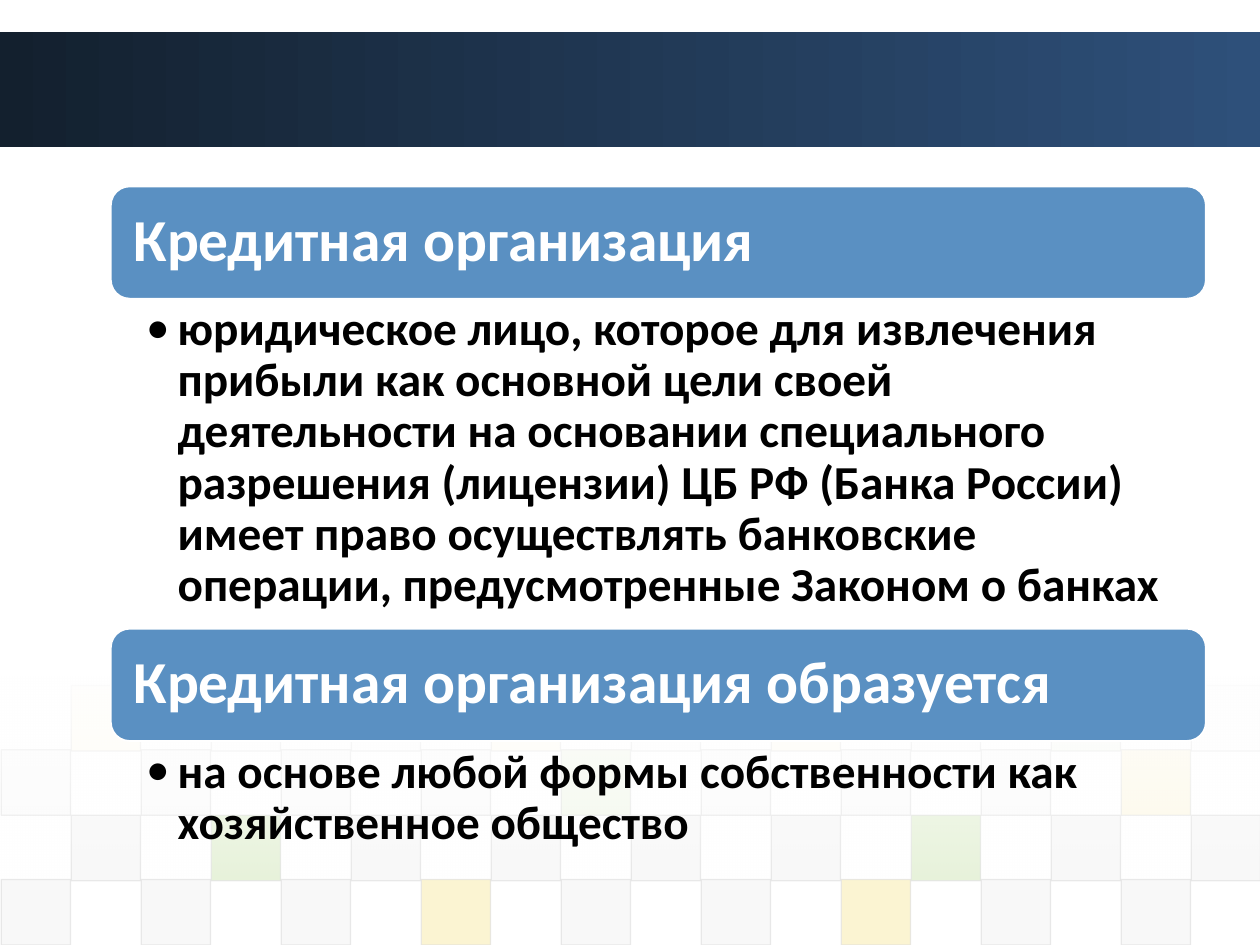
import lxml.etree
import pptx
import pptx.dml.color
import pptx.enum.shapes
import pptx.enum.text
import pptx.oxml.ns
import pptx.util

Inches, Pt = pptx.util.Inches, pptx.util.Pt
RGB = pptx.dml.color.RGBColor.from_string
qn = pptx.oxml.ns.qn
MSO_SHAPE = pptx.enum.shapes.MSO_SHAPE
ANCHOR = pptx.enum.text.MSO_ANCHOR

COLORS = {
    "band_start": "13202E", "band_end": "2E507A", "heading": "5A90C2",
    "white": "FFFFFF", "black": "000000",
    "D": "DDDDDD", "E": "EAEAEA", "G": "8AC246", "Y": "EFC821",
}

prs = pptx.Presentation()
prs.slide_width, prs.slide_height = Inches(10), Inches(7.5)
s = prs.slides.add_slide(prs.slide_layouts[4])
title = s.shapes.title.element
title.getparent().remove(title)


def add_box(kind, left, top, width, height):
    sp = s.shapes.add_shape(kind, Inches(left), Inches(top), Inches(width), Inches(height))
    sp.shadow.inherit = False
    sp.line.fill.background()
    return sp


def set_alpha(fill_element, *percents):
    for clr, percent in zip(fill_element.iter(qn("a:srgbClr")), percents):
        lxml.etree.SubElement(clr, qn("a:alpha")).set("val", str(percent * 1000))


band = add_box(MSO_SHAPE.RECTANGLE, 0, 0.25, 10, 0.92)
fade = add_box(MSO_SHAPE.RECTANGLE, 0, 5.37, 10, 1.62)
for sp, angle, start, end in [(band, 0, "band_start", "band_end"), (fade, 270, "white", "white")]:
    sp.fill.gradient()
    sp.fill.gradient_angle = angle
    for stop, name in zip(sp.fill.gradient_stops, (start, end)):
        stop.color.rgb = RGB(COLORS[name])
set_alpha(fade.element.spPr.find(qn("a:gradFill")), 90, 0)

tile_rows = [
    (5.44, 1, 5, "YEEYDYEGE"),
    (5.95, 0, 10, "DDDDGDDDY"),
    (6.47, 1, 20, "DGDDDDGDD"),
    (6.98, 0, 20, "DDDYDDYDD"),
]
for top, first, alpha, codes in tile_rows:
    for i, code in enumerate(codes):
        left = 0.01 + (first + 2 * i) * 5 / 9
        tile = add_box(MSO_SHAPE.RECTANGLE, left, top, 0.55, 0.52)
        tile.fill.solid()
        tile.fill.fore_color.rgb = RGB(COLORS[code])
        tile.line.color.rgb = RGB(COLORS["D"])
        tile.line.width = Pt(0.75)
        set_alpha(tile.element.spPr, alpha, 60)
s.shapes._spTree.append(fade.element)

sections = [
    (1.48, 2.62, "Кредитная организация",
     "юридическое лицо, которое для извлечения прибыли как основной цели своей "
     "деятельности на основании специального разрешения (лицензии) ЦБ РФ (Банка России) "
     "имеет право осуществлять банковские операции, предусмотренные Законом о банках"),
    (4.99, 0.92, "Кредитная организация образуется",
     "на основе любой формы собственности как хозяйственное общество"),
]
placeholders = list(s.placeholders)
for n, (top, body_height, heading, body) in enumerate(sections):
    bar = add_box(MSO_SHAPE.ROUNDED_RECTANGLE, 0.88, top, 8.69, 0.89)
    bar.fill.solid()
    bar.fill.fore_color.rgb = RGB(COLORS["heading"])
    bar.line.color.rgb = RGB(COLORS["white"])
    bar.line.width = Pt(1)

    blocks = [
        (heading, (0.92, top + 0.04, 8.61, 0.8), (0.14, 0.14, 0.14, 0.14), ANCHOR.MIDDLE, 34, "white"),
        (body, (0.88, top + 0.89, 8.69, body_height), (0.28, 0.05, 0.26, 0.05), ANCHOR.TOP, 27, "black"),
    ]
    for sp, (text, box, insets, anchor, size, color) in zip(placeholders[2 * n:2 * n + 2], blocks):
        s.shapes._spTree.append(sp.element)
        sp.left, sp.top, sp.width, sp.height = map(Inches, box)
        tf = sp.text_frame
        tf.text = text
        tf.word_wrap = True
        tf.auto_size = pptx.enum.text.MSO_AUTO_SIZE.NONE
        tf.vertical_anchor = anchor
        tf.margin_left, tf.margin_top, tf.margin_right, tf.margin_bottom = map(Inches, insets)
        p = tf.paragraphs[0]
        p.line_spacing = 0.9
        p.space_before = Pt(0)
        if text == body:
            p.level = 1
            pPr = p._p.get_or_add_pPr()
            pPr.set("marL", str(Inches(0.25)))
            pPr.set("indent", str(-Inches(0.25)))
            lxml.etree.SubElement(pPr, qn("a:buFont")).set("typeface", "Calibri")
            lxml.etree.SubElement(pPr, qn("a:buChar")).set("char", "•")
        r = p.runs[0]
        r.font.name = "Calibri"
        r.font.size = Pt(size)
        r.font.bold = True
        r.font.color.rgb = RGB(COLORS[color])

prs.save("out.pptx")
